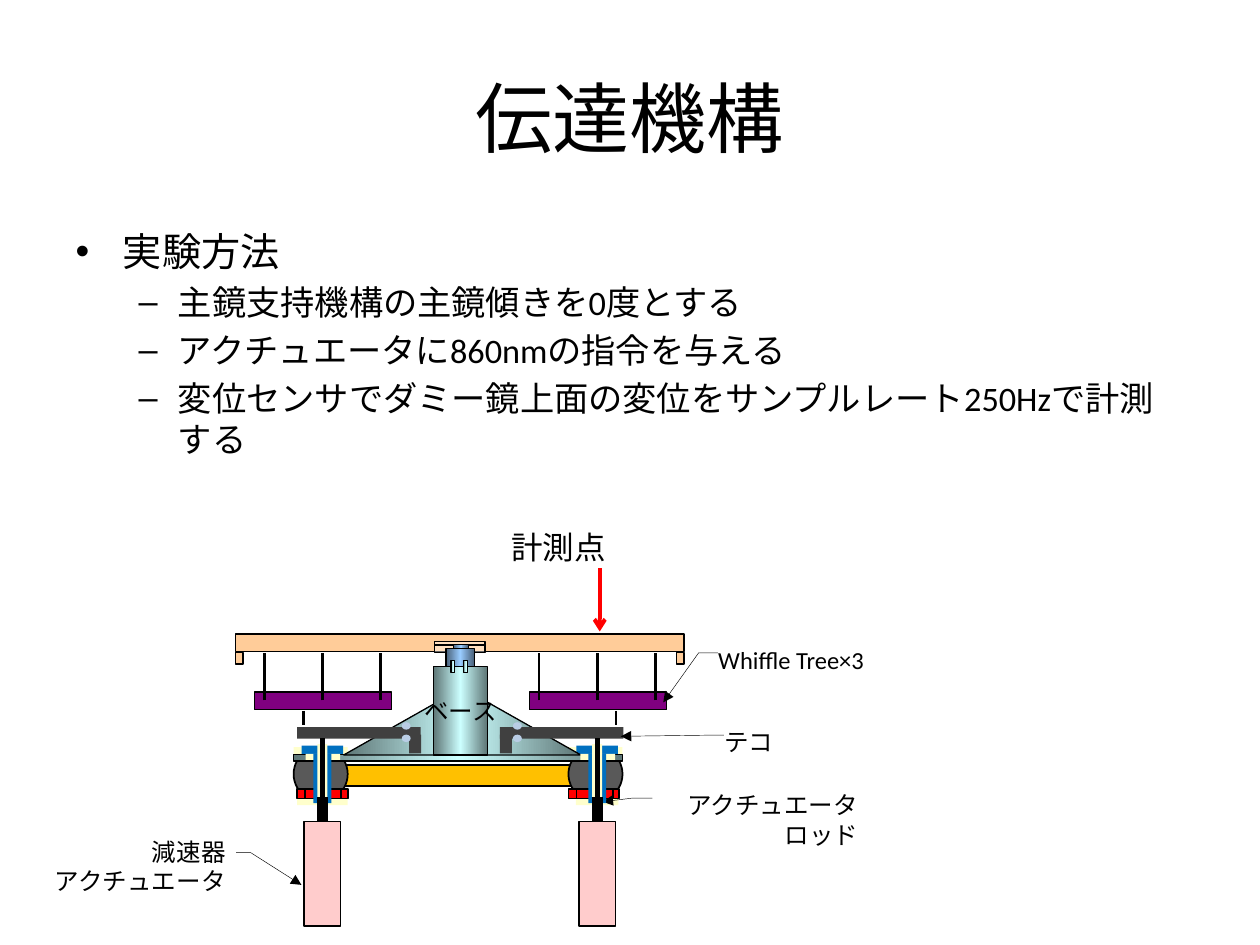
from dataclasses import dataclass
from typing import Optional

from lxml import etree
from pptx import Presentation
from pptx import util as u
from pptx.dml import color
from pptx.enum import dml, lang, shapes, text
from pptx.oxml import ns


@dataclass(frozen=True)
class Theme:
    font: str = "Calibri"
    title: float = 44
    heading: float = 22.4
    item: float = 19.6
    point: float = 18
    label: float = 14
    black: str = "000000"
    white: str = "FFFFFF"
    red: str = "FF0000"
    cream: str = "FFFFCC"
    blue: str = "0070C0"
    gold: str = "FFC000"
    rubber: str = "595959"
    lever: str = "404040"
    ball: str = "B9CDE5"
    mirror: str = "FFCC99"
    tree: str = "800080"
    motor: str = "FFCCCC"
    steel: tuple = ("5E7676", "CCFFFF", "5E7676")
    pivot: tuple = ("475E76", "99CCFF", "475E76")


@dataclass(frozen=True)
class Box:
    x: float
    y: float
    w: float
    h: float


@dataclass(frozen=True)
class Side:
    cx: float
    sign: int
    pad: Box
    clamp_x: float
    lever_x: float
    foot_x: float
    ball_x: float


@dataclass(frozen=True)
class Callout:
    box: Box
    lines: tuple
    align: int
    adjust: tuple


T = Theme()
RECT = shapes.MSO_SHAPE.RECTANGLE
OVAL = shapes.MSO_SHAPE.OVAL
TRIANGLE = shapes.MSO_SHAPE.ISOSCELES_TRIANGLE
CALLOUT = shapes.MSO_SHAPE.LINE_CALLOUT_2_NO_BORDER
LEFT, CENTER, RIGHT = text.PP_ALIGN.LEFT, text.PP_ALIGN.CENTER, text.PP_ALIGN.RIGHT

SIDES = (
    Side(6.5, -1, Box(5.99, 16, 1.02, 0.23), 5.99, 5.99, 8.25, 8.1),
    Side(12.04, 1, Box(11.61, 16, 0.86, 0.23), 11.46, 10.08, 10.08, 10.34),
)
CALLOUTS = (
    Callout(Box(13.16, 15.93, 4.14, 0.61), ("アクチュエータロッド",), RIGHT,
            (0.267, -0.002, 0.267, -0.104, 0.381, -0.244)),
    Callout(Box(0.74, 16.87, 3.81, 1.19), ("減速器", "アクチュエータ"), RIGHT,
            (0.267, 1.055, 0.267, 1.132, 0.815, 1.401)),
    Callout(Box(14.48, 13, 3.81, 0.61), ("Whiffle Tree×3",), LEFT,
            (0.267, -0.002, 0.267, -0.104, 1.902, -0.291)),
    Callout(Box(14.6, 14.66, 3.81, 0.61), ("テコ",), LEFT,
            (0.267, -0.002, 0.267, -0.104, 0.303, -0.547)),
)
ITEMS = (
    "主鏡支持機構の主鏡傾きを0度とする",
    "アクチュエータに860nmの指令を与える",
    "変位センサでダミー鏡上面の変位をサンプルレート250Hzで計測する",
)


def rgb(value: str) -> color.RGBColor:
    return color.RGBColor.from_string(value)


def move(sp, box: Box) -> None:
    sp.left, sp.top, sp.width, sp.height = (u.Cm(v) for v in (box.x, box.y, box.w, box.h))


def write(p, words: str, size: float, align: Optional[int] = None) -> None:
    r = p.add_run()
    r.text = words
    r.font.language_id = lang.MSO_LANGUAGE_ID.JAPANESE
    p.font.name, p.font.size = T.font, u.Pt(size)
    p.font.color.rgb = rgb(T.black)
    p.alignment = align


def add_arrowhead(sp, kind: str) -> None:
    ln = sp.line._get_or_add_ln()
    etree.SubElement(ln, ns.qn("a:tailEnd"), type=kind)


def paint(sp, fill) -> None:
    if fill is None:
        sp.fill.background()
    elif isinstance(fill, tuple):
        sp.fill.gradient()
        sp.fill.gradient_angle = 0
        stops = sp._element.spPr.find(".//" + ns.qn("a:gsLst"))
        for stop in list(stops):
            stops.remove(stop)
        for i, value in enumerate(fill):
            stop = etree.SubElement(stops, ns.qn("a:gs"), pos=str(i * 50000))
            etree.SubElement(stop, ns.qn("a:srgbClr"), val=value)
    else:
        sp.fill.solid()
        sp.fill.fore_color.rgb = rgb(fill)


def part(s, box: Box, fill, width: float = 0, kind=RECT):
    sp = s.shapes.add_shape(kind, 0, 0, 0, 0)
    move(sp, box)
    sp.shadow.inherit = False
    paint(sp, fill)
    if width:
        sp.line.color.rgb = rgb(T.black)
        sp.line.width = u.Pt(width)
    else:
        sp.line.fill.background()
    return sp


def line(s, x1: float, y1: float, x2: float, y2: float, width: float, shade: str = T.black):
    sp = s.shapes.add_connector(shapes.MSO_CONNECTOR.STRAIGHT, *(u.Cm(v) for v in (x1, y1, x2, y2)))
    sp.line.color.rgb = rgb(shade)
    sp.line.width = u.Pt(width)
    sp.line.dash_style = dml.MSO_LINE.SOLID
    etree.SubElement(sp._element.spPr, ns.qn("a:effectLst"))
    return sp


def add_callout(s, c: Callout) -> None:
    sp = part(s, c.box, None, 0.25, CALLOUT)
    for i, value in enumerate(c.adjust):
        sp.adjustments[i] = value
    add_arrowhead(sp, "triangle")
    tf = sp.text_frame
    tf.word_wrap = True
    tf.vertical_anchor = text.MSO_ANCHOR.TOP
    tf.auto_size = text.MSO_AUTO_SIZE.SHAPE_TO_FIT_TEXT
    tf.margin_left = tf.margin_right = tf.margin_top = tf.margin_bottom = 0
    for i, words in enumerate(c.lines):
        write(tf.add_paragraph() if i else tf.paragraphs[0], words, T.label, c.align)


def add_text(s) -> None:
    title, body = s.placeholders
    move(title, Box(1.27, 0.76, 22.86, 3.18))
    write(title.text_frame.paragraphs[0], "伝達機構", T.title, CENTER)
    move(body, Box(1.27, 4.45, 22.86, 4.09))
    tf = body.text_frame
    tf.auto_size = text.MSO_AUTO_SIZE.NONE
    write(tf.paragraphs[0], "実験方法", T.heading)
    for words in ITEMS:
        p = tf.add_paragraph()
        p.level = 1
        write(p, words, T.item)


def add_measuring_point(s) -> None:
    arrow = line(s, 12.09, 11.46, 12.09, 12.73, 2.25, T.red)
    add_arrowhead(arrow, "arrow")
    sp = s.shapes.add_textbox(0, 0, 0, 0)
    move(sp, Box(10.06, 10.52, 2.44, 1.02))
    sp.text_frame.word_wrap = False
    sp.text_frame.auto_size = text.MSO_AUTO_SIZE.SHAPE_TO_FIT_TEXT
    write(sp.text_frame.paragraphs[0], "計測点", T.point)


def add_support(s, side: Side):
    x = side.cx
    part(s, Box(x - 0.58, 15.06, 1.09, 1.09), T.rubber, 1, OVAL)
    part(s, Box(x - 0.58, 15.06, 1.09, 0.23), T.cream)
    part(s, side.pad, T.cream)
    part(s, Box(x - 0.42, 15.03, 0.84, 0.18), T.blue)
    part(s, Box(side.clamp_x, 15.9, 1.02, 0.2), T.red, 1)
    for dx in (0.16, 0.89):
        line(s, side.clamp_x + dx, 15.9, side.clamp_x + dx, 16.1, 1)
    return part(s, Box(x - 0.37, 16.56, 0.74, 2.11), T.motor, 0.75)


def add_mirror(s) -> None:
    part(s, Box(4.75, 12.78, 9.04, 0.36), T.mirror, 0.75)
    recess = part(s, Box(8.76, 12.93, 1.02, 0.23), T.white, 0.75)
    shade = recess._element.spPr.find(ns.qn("a:solidFill"))[0]
    etree.SubElement(shade, ns.qn("a:alpha"), val="40000")
    line(s, 8.76, 13, 9.78, 13, 1.5)
    part(s, Box(9.14, 13, 0.3, 0.28), T.pivot, 0.75)
    part(s, Box(8.99, 13.08, 0.58, 0.36), T.pivot, 0.75)
    for x in (4.75, 13.64):
        part(s, Box(x, 13.16, 0.15, 0.23), T.mirror, 0.75)


def add_whiffle_tree(s, side: Side) -> None:
    part(s, Box(side.cx - 1.37, 13.95, 2.77, 0.36), T.tree, 0.75)
    for dx in (-1.17, 0, 1.17):
        line(s, side.cx + dx, 14.12, side.cx + dx, 13.16, 1.5)
    hanger = side.cx + side.sign * 0.38
    line(s, hanger, 14.33, hanger, 14.62, 1.5)


def add_base(s) -> None:
    part(s, Box(5.92, 15.21, 6.63, 0.13), T.steel, 0.75)
    part(s, Box(6.93, 13.87, 4.78, 1.35), T.steel, 0.75, TRIANGLE)
    column = part(s, Box(8.74, 13.44, 1.09, 1.78), T.steel, 0.75)
    column.text_frame.word_wrap = False
    write(column.text_frame.paragraphs[0], "ベース", T.label, CENTER)
    for x in (9.09, 9.35):
        part(s, Box(x, 13.31, 0.08, 0.25), T.steel, 0.75)


def add_lever(s, side: Side) -> None:
    part(s, Box(side.lever_x, 14.66, 2.49, 0.23), T.lever)
    part(s, Box(side.foot_x, 14.81, 0.24, 0.38), T.lever)
    for y in (14.56, 14.81):
        part(s, Box(side.ball_x, y, 0.18, 0.15), T.ball, 0, OVAL)


def add_rod(s, side: Side, motor) -> None:
    x = side.cx
    part(s, Box(x - 0.34, 15.2, 0.7, 0.12), T.cream)
    part(s, Box(x - 0.18, 15.19, 0.36, 1), T.blue)
    part(s, Box(x - 0.1, 15, 0.2, 1.3), T.cream)
    line(s, x, 16.07, x, 14.87, 3)
    line(s, x, 16.56, x, 16.06, 6).begin_connect(motor, 0)


def main() -> None:
    prs = Presentation()
    prs.slide_width, prs.slide_height = u.Cm(25.4), u.Cm(19.05)
    s = prs.slides.add_slide(prs.slide_layouts[1])
    add_text(s)
    add_measuring_point(s)
    part(s, Box(6.65, 15.42, 5.11, 0.43), T.gold, 1)
    motors = [add_support(s, side) for side in SIDES]
    add_mirror(s)
    for side in SIDES:
        add_whiffle_tree(s, side)
    add_base(s)
    for side in SIDES:
        add_lever(s, side)
    for c in CALLOUTS:
        add_callout(s, c)
    for side, motor in zip(SIDES, motors):
        add_rod(s, side, motor)
    prs.save("out.pptx")


if __name__ == "__main__":
    main()
